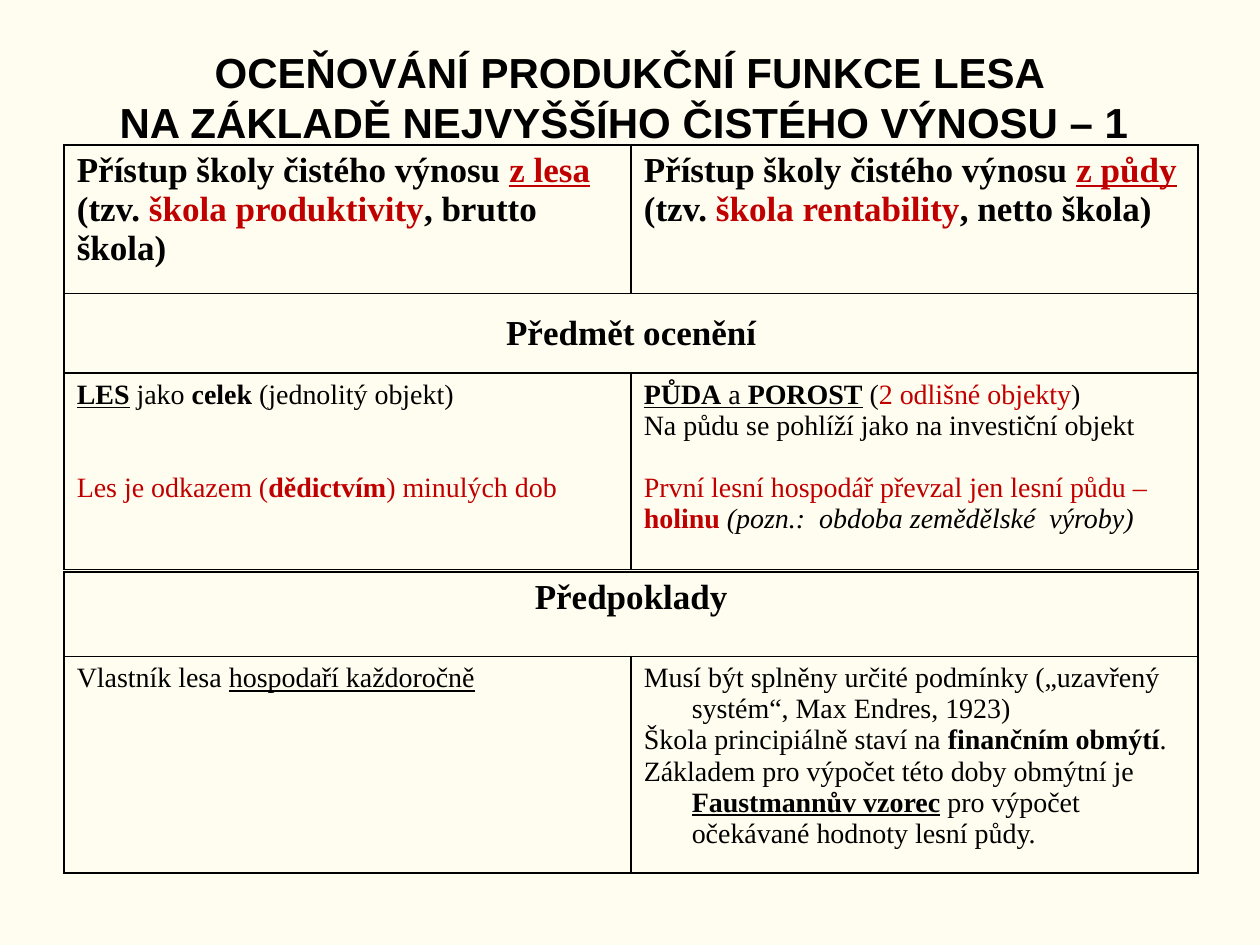
from dataclasses import dataclass

from lxml.etree import SubElement
from pptx import Presentation
from pptx.dml.color import RGBColor
from pptx.enum.text import MSO_ANCHOR as Anchor, PP_ALIGN as Align
from pptx.oxml.ns import qn
from pptx.util import Pt


@dataclass(frozen=True)
class Theme:
    background: RGBColor = RGBColor(0xFF, 0xFD, 0xEF)
    ink: RGBColor = RGBColor(0, 0, 0)
    accent: RGBColor = RGBColor(0xC0, 0, 0)
    title_font: str = "Arial"
    body_font: str = "Times New Roman"
    title_size: float = 24
    heading_size: float = 20
    body_size: float = 16
    blank_line: float = 17.7


THEME = Theme()
LEFT, COLUMN_WIDTH = 36.7, 324
HANGING = 27.4

# A paragraph is a list of (text, style) runs; style letters:
# b = bold, u = underlined, i = italic, r = red.
FOREST_SCHOOL = [
    [("Přístup školy čistého výnosu ", "b"), ("z lesa", "bur")],
    [("(tzv. ", "b"), ("škola produktivity", "br"), (", brutto škola)", "b")],
]
SOIL_SCHOOL = [
    [("Přístup školy čistého výnosu ", "b"), ("z půdy", "bur")],
    [("(tzv. ", "b"), ("škola rentability", "br"), (", netto škola)", "b")],
]
FOREST_SUBJECT = [
    [("LES", "bu"), (" jako ", ""), ("celek", "b"), (" (jednolitý objekt)", "")],
    [("Les je odkazem (", "r"), ("dědictvím", "br"), (") minulých dob", "r")],
]
SOIL_SUBJECT = [
    [("PŮDA", "bu"), (" a ", "u"), ("POROST", "bu"), (" (", ""),
     ("2 odlišné objekty", "r"), (")", "")],
    [("Na půdu se pohlíží jako na investiční objekt", "")],
    [("První lesní hospodář převzal jen lesní půdu – ", "r"), ("holinu ", "br"),
     ("(pozn.:  obdoba zemědělské  výroby)", "i")],
]
FOREST_ASSUMPTIONS = [[("Vlastník lesa ", ""), ("hospodaří každoročně", "u")]]
SOIL_ASSUMPTIONS = [
    [("Musí být splněny určité podmínky („uzavřený systém“, Max Endres, 1923)", "")],
    [("Škola principiálně staví na ", ""), ("finančním obmýtí", "b"), (".", "")],
    [("Základem pro výpočet této doby obmýtní je ", ""), ("Faustmannův vzorec", "bu"),
     (" pro výpočet očekávané hodnoty lesní půdy.", "")],
]


def format_run(run, font_name, size, style):
    font = run.font
    font.name, font.size = font_name, Pt(size)
    font.bold, font.underline, font.italic = ("b" in style, "u" in style, "i" in style)
    font.color.rgb = THEME.accent if "r" in style else THEME.ink


def add_title(slide, text):
    title = slide.shapes.title
    title.left, title.top, title.width, title.height = Pt(36), Pt(21.6), Pt(648), Pt(67)
    frame = title.text_frame
    frame.text = text
    frame.word_wrap = True
    frame.vertical_anchor = Anchor.MIDDLE
    paragraph = frame.paragraphs[0]
    paragraph.alignment = Align.CENTER
    for run in paragraph.runs:
        format_run(run, THEME.title_font, THEME.title_size, "b")


def add_borders(cell):
    properties = cell._tc.get_or_add_tcPr()
    for position, tag in enumerate(("a:lnL", "a:lnR", "a:lnT", "a:lnB")):
        line = properties.makeelement(qn(tag), {"w": str(Pt(1))})
        fill = SubElement(line, qn("a:solidFill"))
        SubElement(fill, qn("a:srgbClr"), val=str(THEME.ink))
        properties.insert(position, line)


def add_grid(slide, top, row_heights):
    """Add a two-column table with black borders and no fill."""
    frame = slide.shapes.add_table(len(row_heights), 2, Pt(LEFT), Pt(top),
                                   Pt(2 * COLUMN_WIDTH), Pt(sum(row_heights)))
    table = frame.table
    table.first_row = table.horz_banding = False
    for column in table.columns:
        column.width = Pt(COLUMN_WIDTH)
    for row, height in zip(table.rows, row_heights):
        row.height = Pt(height)
        for cell in row.cells:
            cell.fill.background()
            add_borders(cell)
    return table


def fill_cell(cell, paragraphs, size, hanging=False, last_gap=0):
    """Write styled paragraphs; last_gap is the space before the last one."""
    frame = cell.text_frame
    for index, runs in enumerate(paragraphs):
        paragraph = frame.add_paragraph() if index else frame.paragraphs[0]
        for text, style in runs:
            run = paragraph.add_run()
            run.text = text
            format_run(run, THEME.body_font, size, style)
        if hanging:
            properties = paragraph._p.get_or_add_pPr()
            properties.set("marL", str(Pt(HANGING)))
            properties.set("indent", str(-Pt(HANGING)))
    if last_gap:
        frame.paragraphs[-1].space_before = Pt(last_gap)


def fill_band(table, row, text, anchor):
    """Merge a row into one centred heading."""
    cell = table.cell(row, 0)
    cell.merge(table.cell(row, 1))
    cell.vertical_anchor = anchor
    fill_cell(cell, [[(text, "b")]], THEME.heading_size)
    cell.text_frame.paragraphs[0].alignment = Align.CENTER


def main():
    presentation = Presentation()
    presentation.slide_width, presentation.slide_height = Pt(720), Pt(540)
    slide = presentation.slides.add_slide(presentation.slide_layouts[5])
    background = slide.background.fill
    background.solid()
    background.fore_color.rgb = THEME.background

    add_title(slide, "OCEŇOVÁNÍ PRODUKČNÍ FUNKCE LESA\v"
                     "NA ZÁKLADĚ NEJVYŠŠÍHO ČISTÉHO VÝNOSU – 1 ")

    subject = add_grid(slide, 82.8, (85, 45.4, 112.3))
    for column, paragraphs in enumerate((FOREST_SCHOOL, SOIL_SCHOOL)):
        fill_cell(subject.cell(0, column), paragraphs, THEME.heading_size)
    fill_band(subject, 1, "Předmět ocenění", Anchor.MIDDLE)
    for column, (paragraphs, blank_lines) in enumerate(
            ((FOREST_SUBJECT, 2), (SOIL_SUBJECT, 1))):
        fill_cell(subject.cell(2, column), paragraphs, THEME.body_size,
                  last_gap=blank_lines * THEME.blank_line)

    assumptions = add_grid(slide, 326.9, (48.2, 123.8))
    fill_band(assumptions, 0, "Předpoklady", Anchor.TOP)
    for column, paragraphs in enumerate((FOREST_ASSUMPTIONS, SOIL_ASSUMPTIONS)):
        fill_cell(assumptions.cell(1, column), paragraphs, THEME.body_size, hanging=True)

    presentation.save("out.pptx")


if __name__ == "__main__":
    main()
